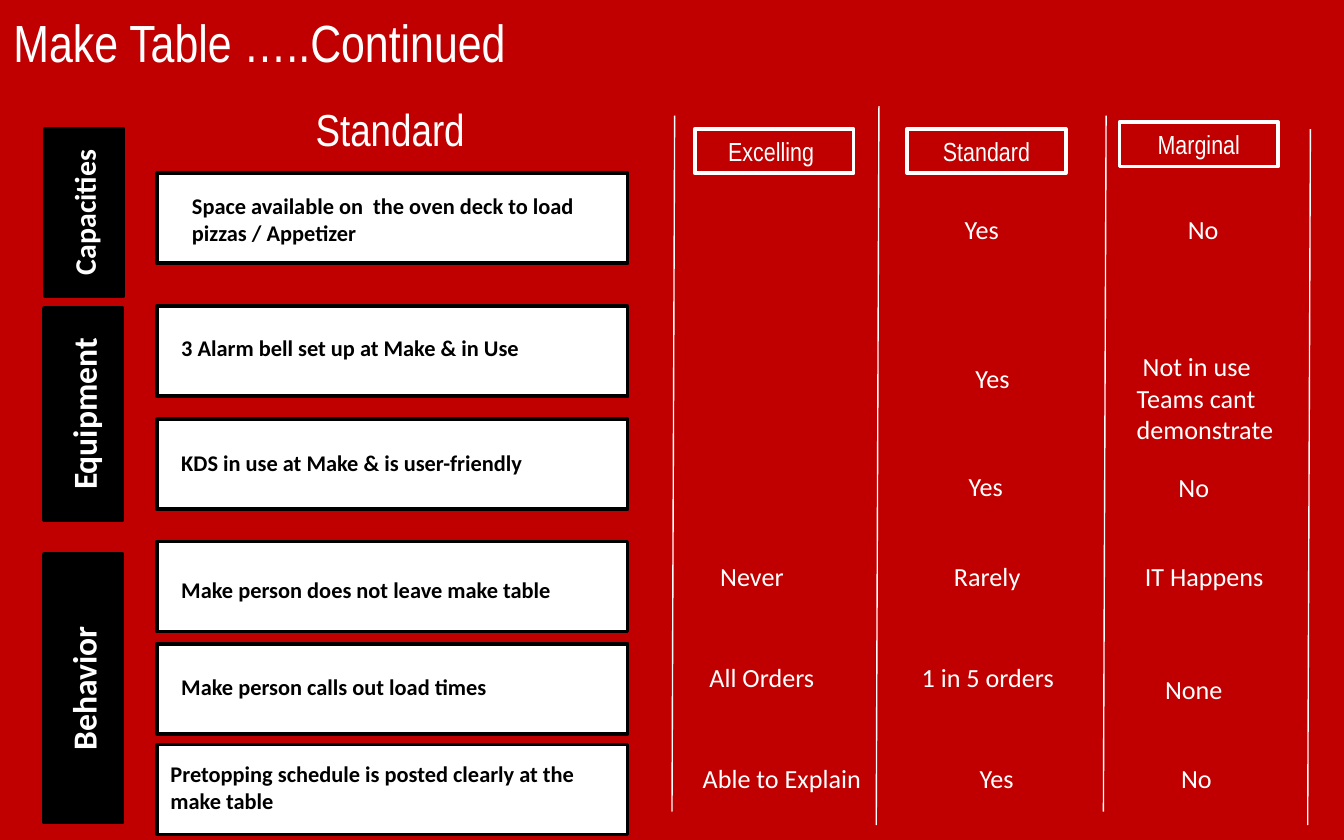
from dataclasses import dataclass

from lxml.etree import SubElement
from pptx import Presentation
from pptx.dml.color import RGBColor
from pptx.enum.shapes import MSO_CONNECTOR, MSO_SHAPE
from pptx.enum.text import MSO_ANCHOR, MSO_AUTO_SIZE, PP_ALIGN
from pptx.oxml.ns import qn
from pptx.util import Emu, Pt


@dataclass(frozen=True)
class Theme:
    red: str = "C00000"
    white: str = "FFFFFF"
    black: str = "000000"
    display: str = "Arial Narrow"
    body: str = "Calibri"
    title: int = 28
    heading: int = 24
    category: int = 18
    small_category: int = 16
    rating: int = 14
    criterion: int = 12
    outline: float = 2
    hairline: float = 0.75


def px(length):
    return Emu(length * 9144)


def write(frame, text, *, size, font, color, bold=False, align=PP_ALIGN.LEFT,
          anchor=MSO_ANCHOR.TOP, wrap=True, fit=MSO_AUTO_SIZE.NONE):
    frame.text = text
    frame.word_wrap = wrap
    frame.auto_size = fit
    frame.vertical_anchor = anchor
    for paragraph in frame.paragraphs:
        paragraph.alignment = align
        for run in paragraph.runs:
            run.font.size = Pt(size)
            run.font.name = font
            run.font.bold = bold
            run.font.color.rgb = RGBColor.from_string(color)


class StandardsSlide:
    """Draws the parts of a standards slide in one theme."""

    def __init__(self, slide, theme):
        self.slide = slide
        self.theme = theme
        slide.background.fill.solid()
        slide.background.fill.fore_color.rgb = RGBColor.from_string(theme.red)

    def title(self, text, left, top, width, height):
        heading = self.slide.shapes.title
        heading.left, heading.top = px(left), px(top)
        heading.width, heading.height = px(width), px(height)
        write(heading.text_frame, text, size=self.theme.title, font=self.theme.display,
              color=self.theme.white, anchor=MSO_ANCHOR.MIDDLE)

    def label(self, text, left, top, width, height, **style):
        box = self.slide.shapes.add_textbox(px(left), px(top), px(width), px(height))
        write(box.text_frame, text, fit=MSO_AUTO_SIZE.SHAPE_TO_FIT_TEXT, **style)

    def box(self, left, top, width, height, fill, line):
        box = self.slide.shapes.add_shape(
            MSO_SHAPE.RECTANGLE, px(left), px(top), px(width), px(height))
        box.shadow.inherit = False
        box.fill.solid()
        box.fill.fore_color.rgb = RGBColor.from_string(fill)
        box.line.color.rgb = RGBColor.from_string(line)
        box.line.width = Pt(self.theme.outline)
        return box

    def column_head(self, text, left, top):
        head = self.box(left, top, 118, 33, self.theme.red, self.theme.white)
        write(head.text_frame, text, size=self.theme.rating, font=self.theme.display,
              color=self.theme.white, align=PP_ALIGN.CENTER, anchor=MSO_ANCHOR.MIDDLE)

    def category(self, text, top, length, size):
        thickness, center = 58, 62
        bar = self.box(center - length // 2, top + (length - thickness) // 2,
                       length, thickness, self.theme.black, self.theme.black)
        bar.rotation = 270
        write(bar.text_frame, text, size=size, font=self.theme.body, bold=True,
              color=self.theme.white, align=PP_ALIGN.CENTER, anchor=MSO_ANCHOR.MIDDLE)

    def criterion(self, text, card_top, left, top, width, height):
        self.box(117, card_top, 350, 67, self.theme.white, self.theme.black)
        self.label(text, left, top, width, height, size=self.theme.criterion,
                   font=self.theme.body, color=self.theme.black, bold=True)

    def rating(self, text, left, top, width, height=34):
        self.label(text, left, top, width, height, size=self.theme.rating,
                   font=self.theme.body, color=self.theme.white, wrap=False)

    def divider(self, x, top, bottom):
        slant = 2
        rule = self.slide.shapes.add_connector(
            MSO_CONNECTOR.STRAIGHT, px(x), px(top), px(x - slant), px(bottom))
        rule.line.color.rgb = RGBColor.from_string(self.theme.white)
        rule.line.width = Pt(self.theme.hairline)
        SubElement(rule._element.spPr, qn("a:effectLst"))


COLUMN_HEADS = [("Excelling ", 517, 96), ("Standard", 675, 96), ("Marginal", 833, 91)]
DIVIDERS = [(502, 86, 604), (654, 79, 614), (823, 86, 604), (975, 96, 614)]
CRITERIA = [
    ("Space available on  the oven deck to load\npizzas / Appetizer", 129, 133, 138, 325, 50),
    ("3 Alarm bell set up at Make & in Use", 228, 125, 244, 325, 30),
    ("KDS in use at Make & is user-friendly", 312, 125, 329, 325, 30),
    ("Make person does not leave make table", 403, 125, 424, 342, 30),
    ("Make person calls out load times", 479, 125, 496, 342, 30),
    ("Pretopping schedule is posted clearly at the make table", 554, 117, 561, 342, 50),
]
RATINGS = [
    ("Yes", 708, 154, 46), ("No", 874, 154, 43),
    ("Yes", 716, 265, 46), (" Not in use\nTeams cant\ndemonstrate", 836, 256, 123, 81),
    ("Yes", 711, 345, 46), ("No", 867, 346, 43),
    ("Never", 526, 412, 68), ("Rarely", 700, 412, 70), ("IT Happens", 842, 412, 109),
    ("All Orders", 518, 487, 98), ("1 in 5 orders", 676, 487, 124), ("None", 857, 496, 68),
    ("Able to Explain", 513, 562, 138), ("Yes", 719, 562, 46), ("No", 869, 562, 43),
]


def main():
    theme = Theme()
    deck = Presentation()
    deck.slide_width, deck.slide_height = px(1000), px(625)
    page = StandardsSlide(deck.slides.add_slide(deck.slide_layouts[5]), theme)

    page.title("Make Table …..Continued", 0, 0, 900, 62)
    page.label("Standard", 225, 71, 147, 48, size=theme.heading, font=theme.display,
               color=theme.white, wrap=False)
    for head in COLUMN_HEADS:
        page.column_head(*head)
    for divider in DIVIDERS:
        page.divider(*divider)
    page.category("Capacities", 96, 125, theme.small_category)
    page.category("Equipment", 229, 158, theme.category)
    page.category("Behavior", 412, 200, theme.category)
    for criterion in CRITERIA:
        page.criterion(*criterion)
    for rating in RATINGS:
        page.rating(*rating)

    deck.save("out.pptx")


if __name__ == "__main__":
    main()
